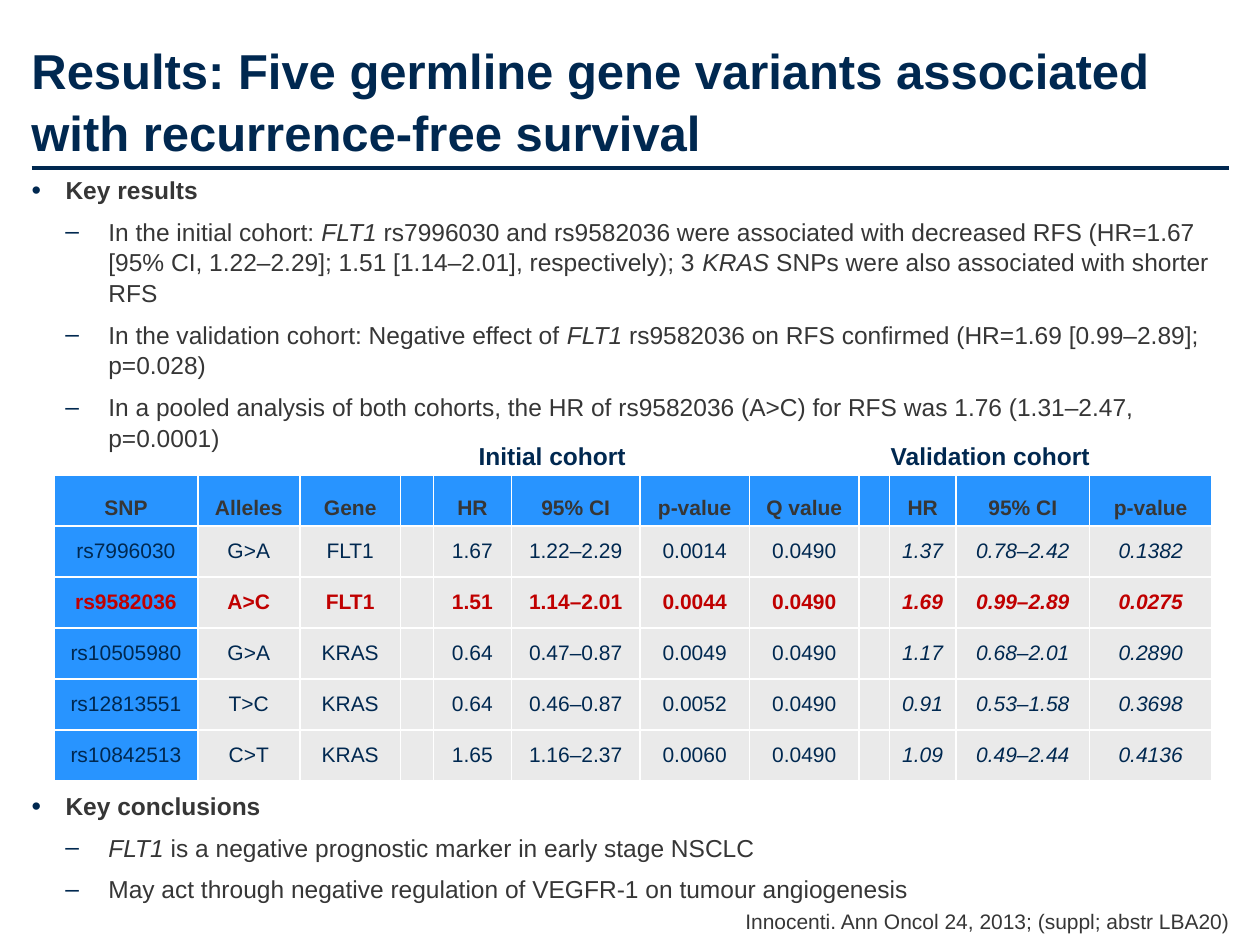
from lxml import etree
from pptx import Presentation
from pptx.dml.color import RGBColor
from pptx.enum.shapes import MSO_CONNECTOR
from pptx.enum.text import MSO_ANCHOR as Anchor, PP_ALIGN as Align
from pptx.oxml.ns import qn
from pptx.util import Inches, Pt

NAVY = RGBColor(0x00, 0x28, 0x50)
DARK_GREY = RGBColor(0x36, 0x36, 0x36)
RED = RGBColor(0xC0, 0x00, 0x00)
BLUE = RGBColor(0x28, 0x94, 0xFF)
LIGHT_GREY = RGBColor(0xEA, 0xEA, 0xEA)


def write(paragraph, text, **font_format):
    """Add text to the paragraph; parts between underscores are italic."""
    for index, part in enumerate(text.split("_")):
        if part:
            run = paragraph.add_run()
            run.text = part
            values = {"name": "Arial", "italic": index % 2 == 1, **font_format}
            run.font.color.rgb = values.pop("color")
            for name, value in values.items():
                setattr(run.font, name, value)


def add_text_box(left, top, width, height, **frame_format):
    box = slide.shapes.add_textbox(Inches(left), Inches(top), Inches(width), Inches(height))
    values = {"word_wrap": True, "margin_left": 0, "margin_right": 0, **frame_format}
    for name, value in values.items():
        setattr(box.text_frame, name, value)
    return box.text_frame


presentation = Presentation()
presentation.slide_width = Inches(10)
presentation.slide_height = Inches(7.5)
slide = presentation.slides.add_slide(presentation.slide_layouts[6])

# Title and rule
rule = slide.shapes.add_connector(
    MSO_CONNECTOR.STRAIGHT, Inches(0.25), Inches(1.33), Inches(9.75), Inches(1.33))
rule.line.color.rgb = NAVY
rule.line.width = Pt(2.25)
etree.SubElement(rule.element.spPr, qn("a:effectLst"))

title = add_text_box(0.25, 0.25, 9.5, 1.03, vertical_anchor=Anchor.BOTTOM, margin_bottom=0)
title.paragraphs[0].line_spacing = 1.05
write(title.paragraphs[0],
      "Results: Five germline gene variants associated with recurrence-free survival",
      size=Pt(28), bold=True, color=NAVY)

# Bulleted sections above and below the table
sections = [
    (1.33, 2.2, "Key results", [
        "In the initial cohort: _FLT1_ rs7996030 and rs9582036 were associated with decreased "
        "RFS (HR=1.67 [95% CI, 1.22–2.29]; 1.51 [1.14–2.01], respectively); 3 _KRAS_ SNPs "
        "were also associated with shorter RFS",
        "In the validation cohort: Negative effect of _FLT1_ rs9582036 on RFS confirmed "
        "(HR=1.69 [0.99–2.89]; p=0.028)",
        "In a pooled analysis of both cohorts, the HR of rs9582036 (A>C) for RFS was 1.76 "
        "(1.31–2.47, p=0.0001)",
    ]),
    (6.22, 0.92, "Key conclusions", [
        "_FLT1_ is a negative prognostic marker in early stage NSCLC",
        "May act through negative regulation of VEGFR-1 on tumour angiogenesis",
    ]),
]
for top, height, heading, points in sections:
    frame = add_text_box(0.25, top, 9.61, height)
    for index, text in enumerate([heading, *points]):
        is_heading = index == 0
        paragraph = frame.paragraphs[0] if is_heading else frame.add_paragraph()
        paragraph.level = 0 if is_heading else 1
        paragraph.line_spacing = 1.05
        paragraph.space_after = Pt(6)
        write(paragraph, text, size=Pt(14), bold=is_heading, color=DARK_GREY)
        margin, indent, bullet, bullet_size = (
            (0.27, -0.27, "•", 110) if is_heading else (0.61, -0.34, "–", 100))
        properties = paragraph._p.get_or_add_pPr()
        properties.set("marL", str(Inches(margin)))
        properties.set("indent", str(Inches(indent)))
        bullet_color = etree.SubElement(properties, qn("a:buClr"))
        etree.SubElement(bullet_color, qn("a:srgbClr"), val=str(NAVY))
        etree.SubElement(properties, qn("a:buSzPct"), val=str(bullet_size * 1000))
        etree.SubElement(properties, qn("a:buFont"), typeface="Arial")
        etree.SubElement(properties, qn("a:buChar"), char=bullet)

# Citation
citation = add_text_box(5.84, 7.21, 3.92, 0.2, word_wrap=False,
                        vertical_anchor=Anchor.BOTTOM, margin_top=0, margin_bottom=0)
citation.paragraphs[0].alignment = Align.RIGHT
write(citation.paragraphs[0], "Innocenti. Ann Oncol 24, 2013; (suppl; abstr LBA20)",
      size=Pt(12), color=DARK_GREY)

# Variant table; empty columns separate the cohorts
column_widths = [1.14, 0.81, 0.8, 0.26, 0.62, 1.02, 0.87, 0.87, 0.24, 0.53, 1.06, 0.97]
rows = [
    ["SNP", "Alleles", "Gene", "", "HR", "95% CI", "p-value", "Q value", "",
     "HR", "95% CI", "p-value"],
    ["rs7996030", "G>A", "FLT1", "", "1.67", "1.22–2.29", "0.0014", "0.0490", "",
     "1.37", "0.78–2.42", "0.1382"],
    ["rs9582036", "A>C", "FLT1", "", "1.51", "1.14–2.01", "0.0044", "0.0490", "",
     "1.69", "0.99–2.89", "0.0275"],
    ["rs10505980", "G>A", "KRAS", "", "0.64", "0.47–0.87", "0.0049", "0.0490", "",
     "1.17", "0.68–2.01", "0.2890"],
    ["rs12813551", "T>C", "KRAS", "", "0.64", "0.46–0.87", "0.0052", "0.0490", "",
     "0.91", "0.53–1.58", "0.3698"],
    ["rs10842513", "C>T", "KRAS", "", "1.65", "1.16–2.37", "0.0060", "0.0490", "",
     "1.09", "0.49–2.44", "0.4136"],
]
HIGHLIGHTED_ROW = 2
FIRST_VALIDATION_COLUMN = 9

table = slide.shapes.add_table(len(rows), len(column_widths), Inches(0.43), Inches(3.77),
                               Inches(9.18), Inches(2.43)).table
for column, width in zip(table.columns, column_widths):
    column.width = Inches(width)
for row_index, row in enumerate(rows):
    is_header = row_index == 0
    is_highlighted = row_index == HIGHLIGHTED_ROW
    color = DARK_GREY if is_header else RED if is_highlighted else NAVY
    for column_index, text in enumerate(row):
        cell = table.cell(row_index, column_index)
        cell.fill.solid()
        cell.fill.fore_color.rgb = BLUE if is_header or column_index == 0 else LIGHT_GREY
        cell.vertical_anchor = Anchor.BOTTOM if is_header else Anchor.MIDDLE
        cell.margin_left = cell.margin_right = Inches(0.05)
        paragraph = cell.text_frame.paragraphs[0]
        paragraph.alignment = Align.CENTER
        paragraph.font.size = Pt(12)
        write(paragraph, text, size=Pt(12), bold=is_header or is_highlighted, color=color,
              italic=not is_header and column_index >= FIRST_VALIDATION_COLUMN)

# Cohort headings over the table
for left, width, text in [(3.7, 1.37, "Initial cohort"), (6.97, 1.79, "Validation cohort")]:
    heading = add_text_box(left, 3.45, width, 0.34, word_wrap=False,
                           margin_left=Inches(0.1), margin_right=Inches(0.1))
    write(heading.paragraphs[0], text, size=Pt(14), bold=True, color=NAVY)

presentation.save("out.pptx")
